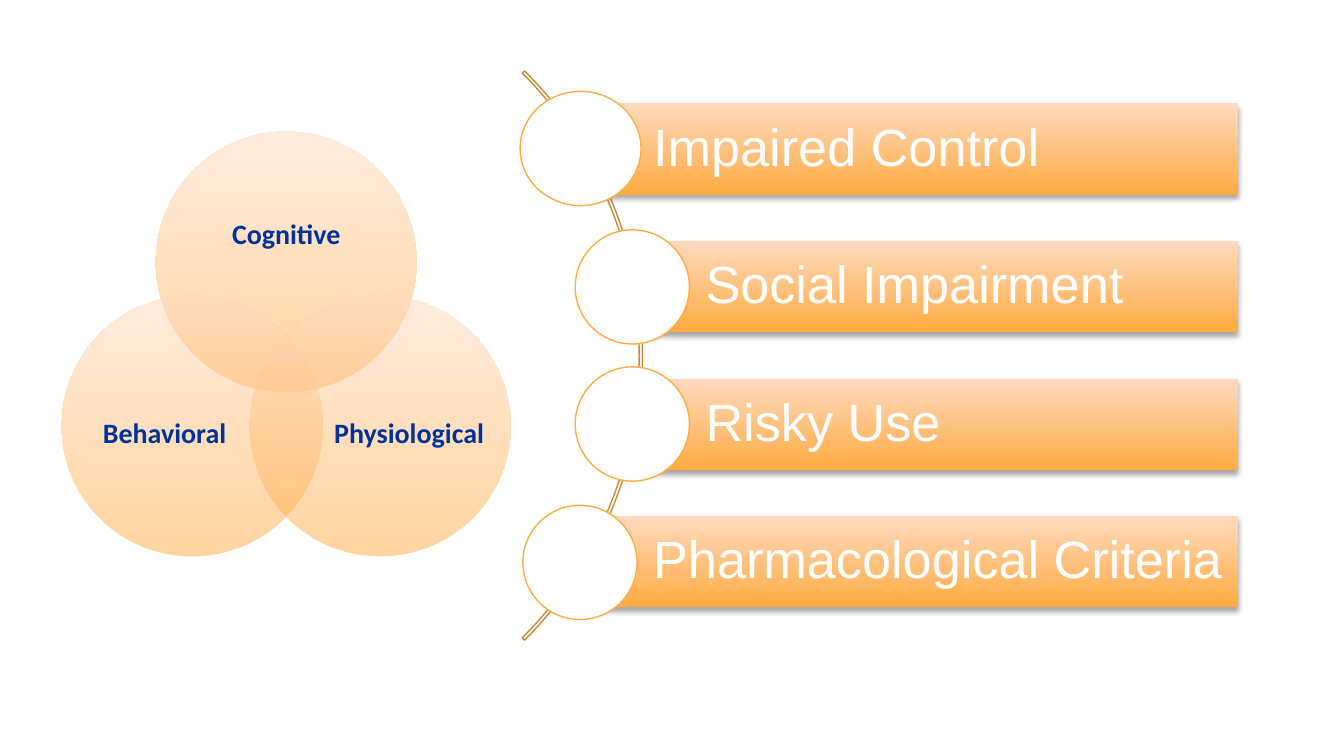
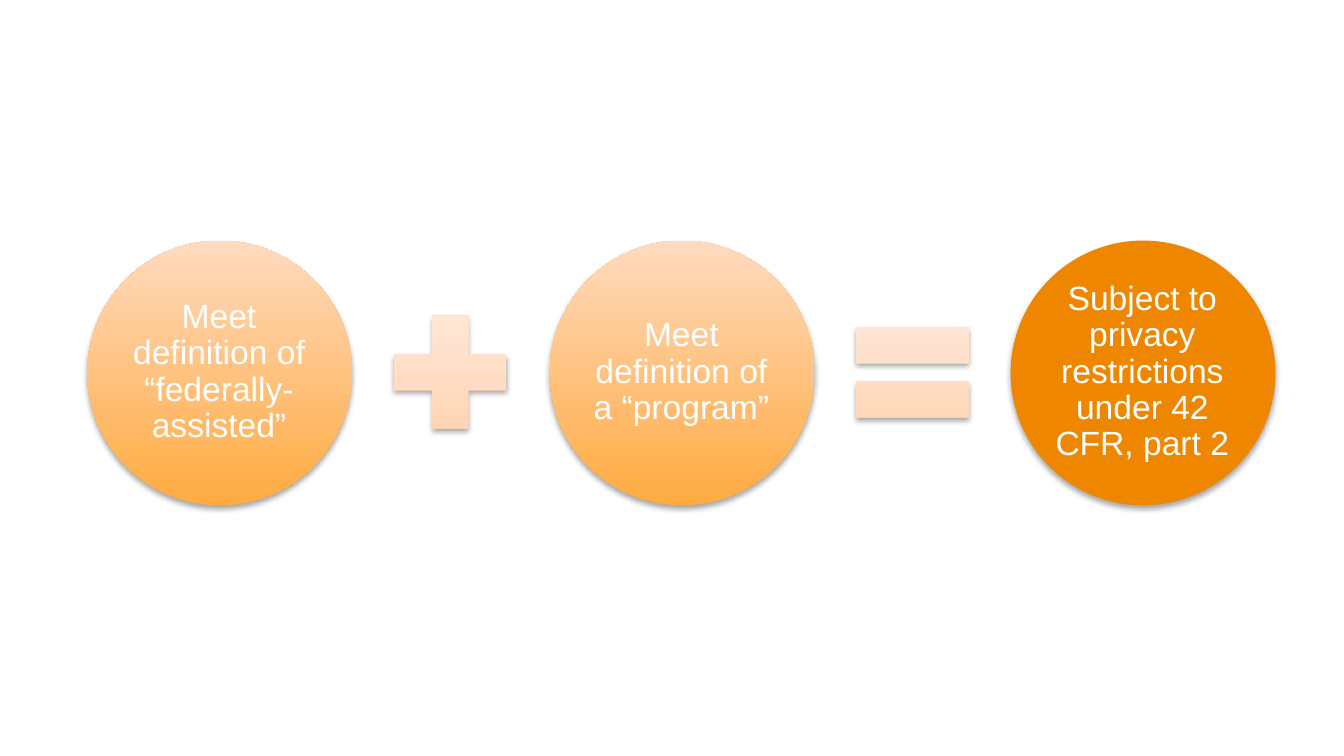
from dataclasses import dataclass

from lxml.etree import SubElement
from pptx import Presentation
from pptx.dml.color import RGBColor
from pptx.enum.shapes import MSO_SHAPE
from pptx.enum.text import MSO_ANCHOR, PP_ALIGN
from pptx.oxml.ns import qn
from pptx.util import Pt

PX = 9144  # EMU in one px, 100 px to the inch


@dataclass(frozen=True)
class Theme:
    # Gradients run from the bottom colour to the top colour
    strong: tuple = ("FFAB40", "FFDAC0")
    pale: tuple = ("FFD2B0", "FFEADC")
    result: str = "EF8600"
    outline: str = "FFAB40"
    arc: str = "CC8933"
    white: str = "FFFFFF"
    navy: str = "003399"
    black: str = "000000"
    body_font: str = "Arial"
    venn_font: str = "Calibri"
    bar_size: int = 28
    circle_size: int = 18
    venn_size: int = 15
    hairline: float = 0.75


THEME = Theme()


def rgb(value):
    return RGBColor.from_string(value)


def spread(first, last, count):
    """Evenly spaced whole positions from first to last."""
    return [int(first + (last - first) * i / (count - 1) + 0.5) for i in range(count)]


# Fills and effects
def paint(shape, colour, opacity=100):
    """Fill with one colour, or with a (bottom, top) gradient."""
    if isinstance(colour, str):
        shape.fill.solid()
        shape.fill.fore_color.rgb = rgb(colour)
        return
    shape.fill.gradient()
    shape.fill.gradient_angle = 90
    for position, (stop, value) in enumerate(zip(shape.fill.gradient_stops, colour)):
        stop.position = position
        stop.color.rgb = rgb(value)
    if opacity < 100:
        for node in shape.fill._xPr.iter(qn("a:srgbClr")):
            SubElement(node, qn("a:alpha"), val=str(opacity * 1000))


def cast_shadow(shape):
    effects = shape._element.spPr.find(qn("a:effectLst"))
    shadow = SubElement(effects, qn("a:outerShdw"), blurRad=str(Pt(3.1)),
                        dist=str(Pt(1.8)), dir="5400000", rotWithShape="0")
    colour = SubElement(shadow, qn("a:srgbClr"), val=THEME.black)
    SubElement(colour, qn("a:alpha"), val="35000")


# Kinds of element
def add_figure(page, kind, left, top, width, height,
               colour=None, line=None, opacity=100, shadow=False):
    shape = page.shapes.add_shape(kind, left * PX, top * PX, width * PX, height * PX)
    shape.shadow.inherit = False
    if colour:
        paint(shape, colour, opacity)
    else:
        shape.fill.background()
    if line:
        shape.line.color.rgb = rgb(line)
        shape.line.width = Pt(THEME.hairline)
    else:
        shape.line.fill.background()
    if shadow:
        cast_shadow(shape)
    return shape


def add_label(page, text, left, top, width, height, size, inset=0, indent=None,
              align=PP_ALIGN.CENTER, font=THEME.body_font, colour=THEME.white, bold=False):
    box = page.shapes.add_textbox(left * PX, top * PX, width * PX, height * PX)
    frame = box.text_frame
    frame.text = text
    frame.word_wrap = True
    frame.vertical_anchor = MSO_ANCHOR.MIDDLE
    frame.margin_left = (inset if indent is None else indent) * PX
    frame.margin_top = frame.margin_right = frame.margin_bottom = inset * PX
    para = frame.paragraphs[0]
    para.alignment = align
    para.line_spacing = 0.9
    span = para.runs[0]
    span.font.name = font
    span.font.size = Pt(size)
    span.font.bold = bold
    span.font.color.rgb = rgb(colour)


def add_venn_circle(page, left, top, text, label_box):
    add_figure(page, MSO_SHAPE.OVAL, left, top, 194, 194, THEME.strong, opacity=50)
    add_label(page, text, *label_box, THEME.venn_size,
              font=THEME.venn_font, colour=THEME.navy, bold=True)


def add_criterion(page, text, bar_left, bar_top, node_top, node_width):
    bar = (bar_left, bar_top, 921 - bar_left, 68)
    add_figure(page, MSO_SHAPE.RECTANGLE, *bar, THEME.strong, shadow=True)
    add_label(page, text, *bar, THEME.bar_size, inset=8, indent=54, align=PP_ALIGN.LEFT)
    node_left = (2 * bar_left - node_width) // 2
    add_figure(page, MSO_SHAPE.OVAL, node_left, node_top, node_width, 85,
               THEME.white, THEME.outline)


def add_term(page, text, left, colour):
    add_figure(page, MSO_SHAPE.OVAL, left, 179, 197, 197, colour, shadow=True)
    add_label(page, text, left + 28, 207, 140, 140, THEME.circle_size, inset=3)


def add_operator(page, kind, left):
    add_figure(page, kind, left, 220, 114, 114, THEME.pale, shadow=True)


# Pages
def build_criteria_page(page):
    for left, top, text, label_box in (
        (116, 98, "Cognitive", (142, 132, 142, 87)),
        (186, 220, "Physiological", (246, 270, 117, 107)),
        (46, 220, "Behavioral", (64, 270, 117, 107)),
    ):
        add_venn_circle(page, left, top, text, label_box)

    arc = add_figure(page, MSO_SHAPE.BLOCK_ARC, -121, -35, 599, 599, line=THEME.arc)
    for index, value in enumerate((189, 27, 0.004)):
        arc.adjustments[index] = value

    criteria = (
        ("Impaired Control", 432, 90),
        ("Social Impairment", 471, 85),
        ("Risky Use", 471, 85),
        ("Pharmacological Criteria", 432, 85),
    )
    bar_tops = spread(77, 384, len(criteria))
    node_tops = spread(68, 376, len(criteria))
    for (text, left, node_width), bar_top, node_top in zip(criteria, bar_tops, node_tops):
        add_criterion(page, text, left, bar_top, node_top, node_width)


def build_equation_page(page):
    terms = (
        ("Meet definition of “federally-assisted”", THEME.strong, MSO_SHAPE.MATH_PLUS),
        ("Meet definition of a “program”", THEME.strong, MSO_SHAPE.MATH_EQUAL),
        ("Subject to privacy restrictions under 42 CFR, part 2", THEME.result, None),
    )
    for (text, colour, operator), left in zip(terms, spread(65, 752, len(terms))):
        add_term(page, text, left, colour)
        if operator:
            add_operator(page, operator, left + 213)


def main():
    deck = Presentation()
    deck.slide_width = 1000 * PX
    deck.slide_height = deck.slide_width * 9 // 16
    blank = deck.slide_layouts[6]
    for build in (build_criteria_page, build_equation_page):
        build(deck.slides.add_slide(blank))
    deck.save("out.pptx")


if __name__ == "__main__":
    main()
